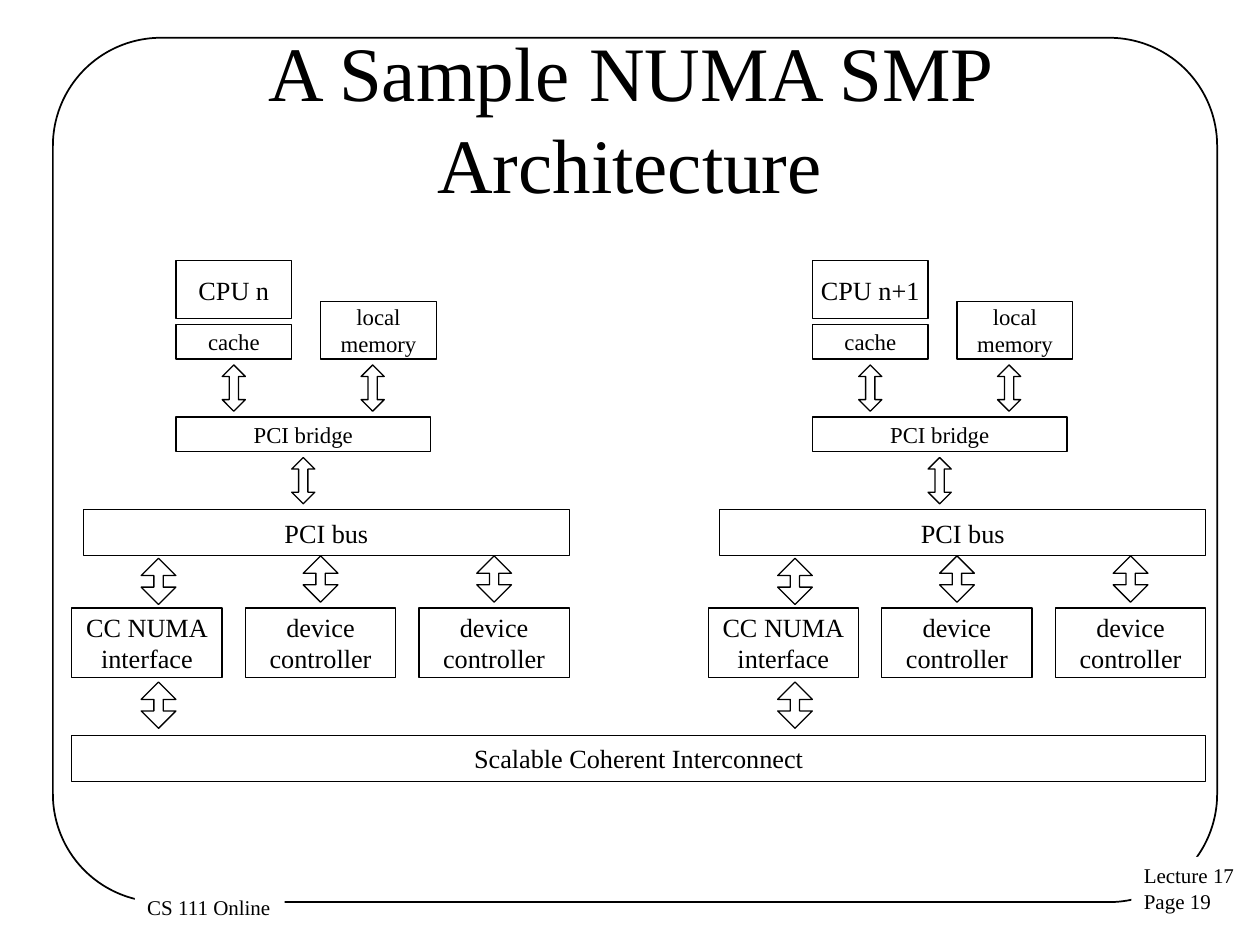
import pptx
import pptx.util
import pptx.dml.color
import pptx.enum.shapes
import pptx.enum.text

SHAPES = pptx.enum.shapes.MSO_SHAPE
ALIGN = pptx.enum.text.PP_ALIGN
ANCHOR = pptx.enum.text.MSO_ANCHOR
COLORS = {"ink": "000000", "paper": "FFFFFF"}
FONT = "Times New Roman"

# Content: inches for the page furniture
TITLE = ("A Sample NUMA SMP Architecture", (0.5, 0.3, 9, 1.25))
FRAME = (0.42, 0.3, 9.24, 6.86)
FOOTERS = [
    ("Lecture 17\nPage 19", (8.98, 6.8, 0.93, 0.51)),
    ("CS 111 Online", (1.07, 7.05, 1.19, 0.3)),
]

# Diagram grid: 98 columns over 9 inches, square cells
LEFT, TOP, CELL = 0.57, 2.07, 9 / 98
NODES = [(0, "CPU n"), (55, "CPU n+1")]  # first column, processor name

# Boxes of one node: text, size, column, row, columns wide, rows high
NODE_BOXES = [
    ("cache", 13, 9, 5.5, 10, 3),
    ("local\nmemory", 13, 21.5, 3.5, 10, 5),
    ("PCI bridge", 13, 9, 13.5, 22, 3),
    ("PCI bus", 15, 1, 21.5, 42, 4),
    ("CC NUMA\ninterface", 15, 0, 30, 13, 6),
    ("device\ncontroller", 15, 15, 30, 13, 6),
    ("device\ncontroller", 15, 30, 30, 13, 6),
]
PROCESSOR = (15, 9, 0, 10, 5)
INTERCONNECT = ("Scalable Coherent Interconnect", 15, 0, 41, 98, 4)

# Arrows of one node: centre column, top row, columns wide
ARROWS = [
    (14, 9, 2), (26, 9, 2), (20, 17, 2),
    (7.5, 25.7, 3), (21.5, 25.5, 3), (36.5, 25.5, 3),
    (7.5, 36.4, 3),
]
ARROW_ROWS = 4
HEAD = 0.8  # head length in cells

presentation = pptx.Presentation()
presentation.slide_width = pptx.util.Inches(10)
presentation.slide_height = pptx.util.Inches(7.5)
slide = presentation.slides.add_slide(presentation.slide_layouts[6])


def color(name):
    return pptx.dml.color.RGBColor.from_string(COLORS[name])


def inches(box):
    return [pptx.util.Inches(value) for value in box]


def on_grid(column, row, columns, rows):
    return (LEFT + column * CELL, TOP + row * CELL, columns * CELL, rows * CELL)


def add_outline(kind, box, line_width=0.75):
    shape = slide.shapes.add_shape(kind, *inches(box))
    shape.shadow.inherit = False
    shape.fill.background()
    shape.line.color.rgb = color("ink")
    shape.line.width = pptx.util.Pt(line_width)
    return shape


def write(shape, text, size, alignment, anchor, wrap=False, margins=(0.1, 0.05)):
    frame = shape.text_frame
    frame.text = text
    frame.word_wrap = wrap
    frame.vertical_anchor = anchor
    frame.margin_left = frame.margin_right = pptx.util.Inches(margins[0])
    frame.margin_top = frame.margin_bottom = pptx.util.Inches(margins[1])
    for paragraph in frame.paragraphs:
        paragraph.alignment = alignment
        paragraph.font.name = FONT
        paragraph.font.size = pptx.util.Pt(size)
        paragraph.font.color.rgb = color("ink")


def add_box(text, size, *cells):
    shape = add_outline(SHAPES.RECTANGLE, on_grid(*cells))
    write(shape, text, size, ALIGN.CENTER, ANCHOR.MIDDLE, margins=(0.11, 0.06))


def add_arrow(center, row, columns):
    box = on_grid(center - columns / 2, row, columns, ARROW_ROWS)
    shape = add_outline(SHAPES.UP_DOWN_ARROW, box)
    shape.adjustments[0] = 0.5
    shape.adjustments[1] = HEAD / columns


# Frame, with footers that cover its edge
add_outline(SHAPES.ROUNDED_RECTANGLE, FRAME, 1).adjustments[0] = 0.125
for text, box in FOOTERS:
    footer = slide.shapes.add_textbox(*inches(box))
    footer.fill.solid()
    footer.fill.fore_color.rgb = color("paper")
    write(footer, text, 12, ALIGN.LEFT, ANCHOR.TOP)

# Title
title, title_box = TITLE
write(slide.shapes.add_textbox(*inches(title_box)), title, 44,
      ALIGN.CENTER, ANCHOR.MIDDLE, wrap=True)

# Two nodes on the shared interconnect
for start, processor in NODES:
    for text, size, column, *cells in [(processor, *PROCESSOR), *NODE_BOXES]:
        add_box(text, size, start + column, *cells)
    for center, row, columns in ARROWS:
        add_arrow(start + center, row, columns)
add_box(*INTERCONNECT)

presentation.save("out.pptx")
